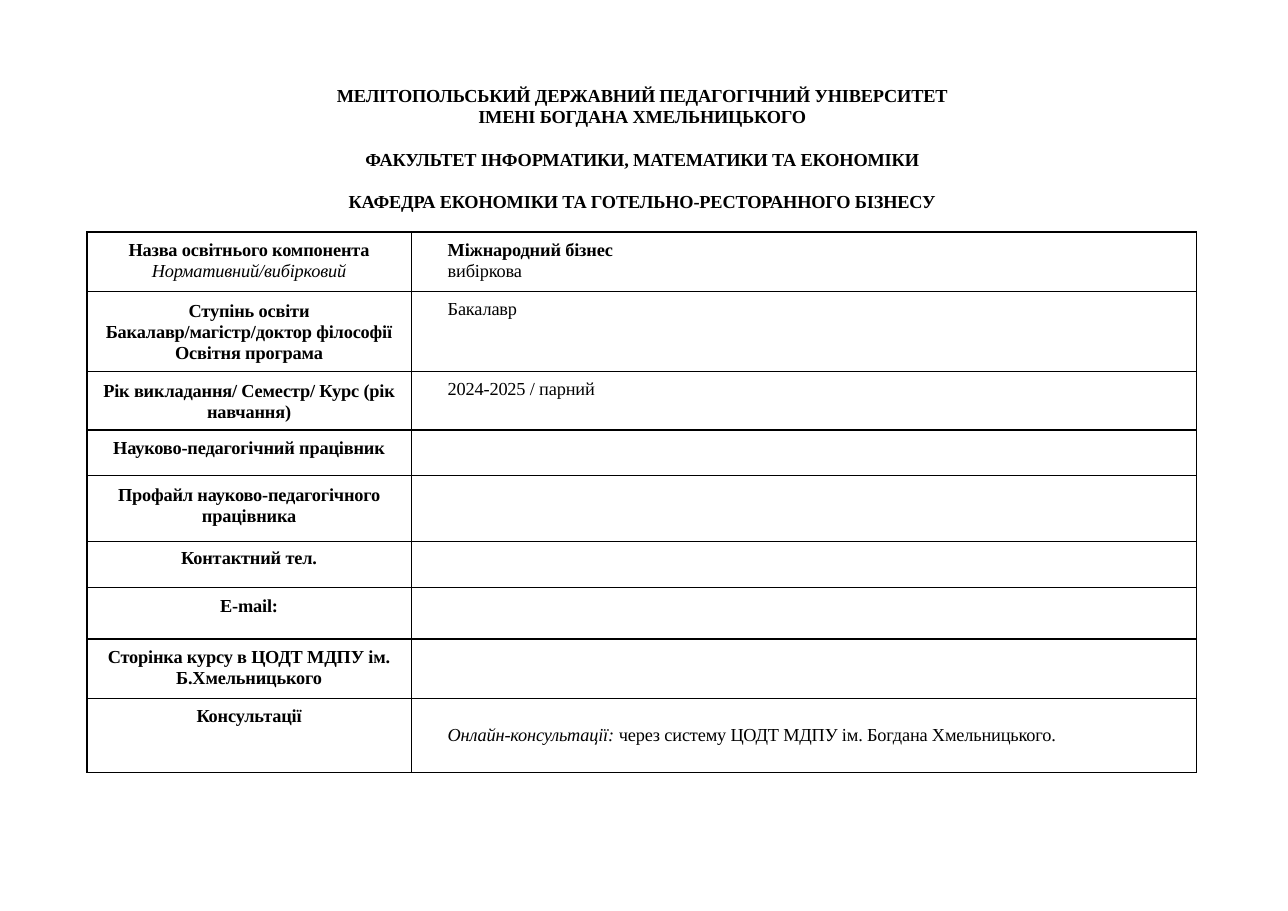
from lxml import etree
from pptx import Presentation, util as u
from pptx.dml.color import RGBColor
from pptx.enum import text
from pptx.oxml.ns import qn

PX = 9144  # 100 px to the inch
FONT = {"name": "Times New Roman", "size": u.Pt(12)}
CENTER, LEFT = text.PP_ALIGN.CENTER, text.PP_ALIGN.LEFT
BOLD, ITALIC, PLAIN = {"bold": True}, {"italic": True}, {}


def write(frame, paragraphs, align, spacing):
    """Fill a text frame; each paragraph is a list of (words, style) runs."""
    frame.word_wrap = True
    for index, runs in enumerate(paragraphs):
        paragraph = frame.add_paragraph() if index else frame.paragraphs[0]
        paragraph.alignment = align
        paragraph.line_spacing = u.Pt(spacing)
        for words, style in runs:
            run = paragraph.add_run()
            run.text = words
            for key, value in {**FONT, "bold": False, **style}.items():
                setattr(run.font, key, value)
            run.font.color.rgb = RGBColor.from_string("000000")
            run._r.get_or_add_rPr().set("spc", "-10")


def set_margins(target, left, top):
    margins = {"left": left, "top": top, "right": 0, "bottom": 0}
    for side, value in margins.items():
        setattr(target, f"margin_{side}", value * PX)


prs = Presentation()
prs.slide_width, prs.slide_height = 1171 * PX, 828 * PX
slide = prs.slides.add_slide(prs.slide_layouts[6])

heading = slide.shapes.add_textbox(300 * PX, 74 * PX, 568 * PX, 119 * PX).text_frame
set_margins(heading, 0, 3)
write(heading, [
    [("МЕЛІТОПОЛЬСЬКИЙ ДЕРЖАВНИЙ ПЕДАГОГІЧНИЙ УНІВЕРСИТЕТ ІМЕНІ БОГДАНА ХМЕЛЬНИЦЬКОГО", BOLD)],
    [("ФАКУЛЬТЕТ ІНФОРМАТИКИ, МАТЕМАТИКИ ТА ЕКОНОМІКИ", BOLD)],
    [("КАФЕДРА ЕКОНОМІКИ ТА ГОТЕЛЬНО-РЕСТОРАННОГО БІЗНЕСУ", BOLD)],
], CENTER, 13.8)
for unit_line in heading.paragraphs[1:]:
    unit_line.line_spacing = u.Pt(27.6)
heading.paragraphs[1].space_before = u.Pt(0.8)

# height, line spacing, label top margin, label, value top margin, value
rows = [
    (54, 14.1, 6, [[("Назва освітнього компонента", BOLD)], [("Нормативний/вибірковий", ITALIC)]],
     6, [[("Міжнародний бізнес", BOLD)], [("вибіркова", PLAIN)]]),
    (73, 13.8, 8, [[("Ступінь освіти", BOLD)], [("Бакалавр/магістр/доктор філософії", BOLD)],
                   [("Освітня програма", BOLD)]],
     6, [[("Бакалавр", PLAIN)]]),
    (53, 13.8, 8, [[("Рік викладання/ Семестр/ Курс (рік навчання)", BOLD)]],
     6, [[("2024-2025 / парний", PLAIN)]]),
    (41, 13.8, 7, [[("Науково-педагогічний працівник", BOLD)]], 0, []),
    (60, 13.8, 8, [[("Профайл науково-педагогічного працівника", BOLD)]], 0, []),
    (42, 13.8, 6, [[("Контактний тел.", BOLD)]], 0, []),
    (47, 13.8, 7, [[("E-mail:", BOLD)]], 0, []),
    (54, 14.1, 6, [[("Сторінка курсу в ЦОДТ МДПУ ім.", BOLD)], [("Б.Хмельницького", BOLD)]], 0, []),
    (67, 13.8, 6, [[("Консультації", BOLD)]],
     24, [[("Онлайн-консультації: ", ITALIC),
           ("через систему ЦОДТ МДПУ ім. Богдана Хмельницького.", PLAIN)]]),
]

course = slide.shapes.add_table(len(rows), 2, 79 * PX, 211 * PX, 1009 * PX, 489 * PX).table
course.first_row = course.horz_banding = False
for column, width in zip(course.columns, (295, 714)):
    column.width = width * PX

for index, (height, spacing, label_top, label, value_top, value) in enumerate(rows):
    course.rows[index].height = height * PX
    label_cell, value_cell = course.rows[index].cells
    set_margins(label_cell, 0, label_top)
    set_margins(value_cell, 33, value_top)
    write(label_cell.text_frame, label, CENTER, spacing)
    write(value_cell.text_frame, value, LEFT, spacing)

for cell in course.iter_cells():
    properties = cell._tc.get_or_add_tcPr()
    for edge in ("lnL", "lnR", "lnT", "lnB"):
        border = etree.SubElement(properties, qn(f"a:{edge}"), w=str(u.Pt(1)))
        ink = etree.SubElement(border, qn("a:solidFill"))
        etree.SubElement(ink, qn("a:srgbClr"), val="000000")
    cell.fill.background()

prs.save("out.pptx")
